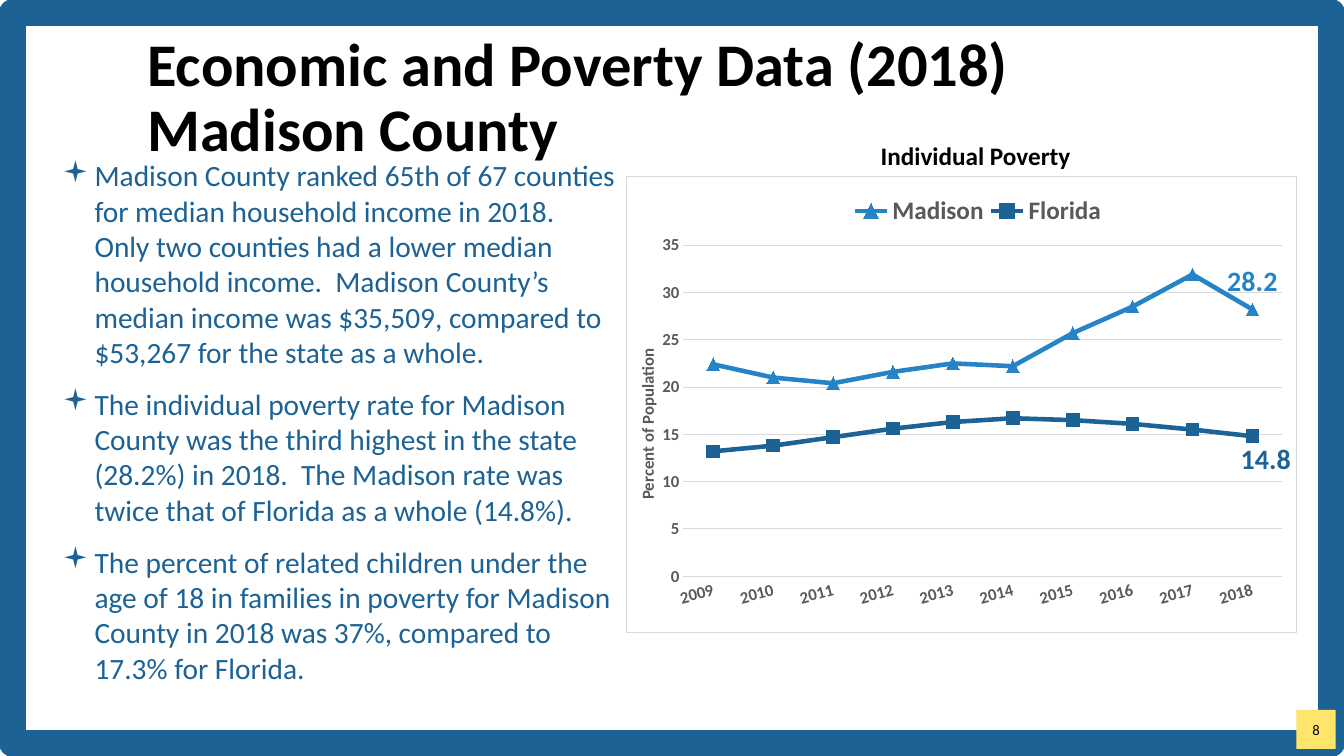
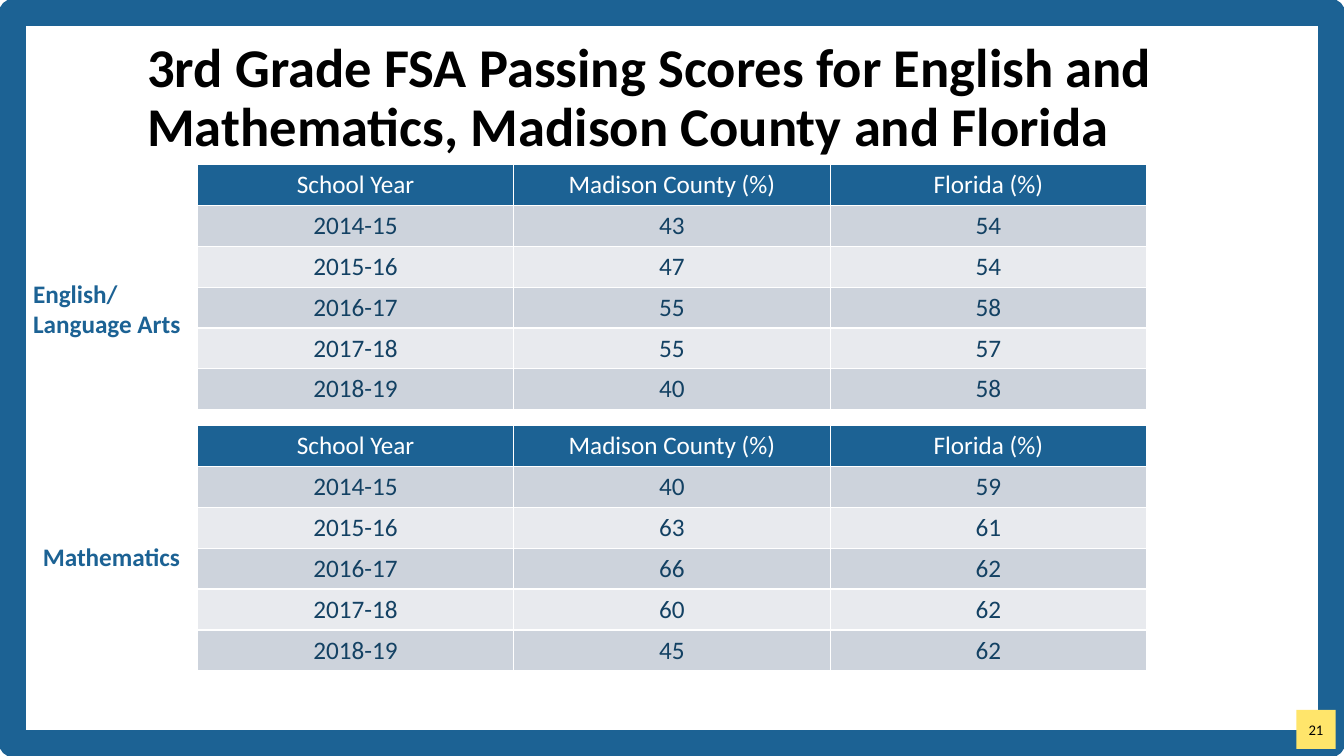
from dataclasses import dataclass

from lxml.etree import SubElement as Sub
from pptx import Presentation
from pptx.chart.data import CategoryChartData as ChartData
from pptx.dml.color import RGBColor as RGB
from pptx.enum.chart import XL_CHART_TYPE as Chart
from pptx.enum.chart import XL_LABEL_POSITION as Spot
from pptx.enum.chart import XL_LEGEND_POSITION as Side
from pptx.enum.chart import XL_MARKER_STYLE as Mark
from pptx.enum.chart import XL_TICK_MARK as Tick
from pptx.enum.shapes import MSO_SHAPE as Shape
from pptx.enum.text import MSO_ANCHOR as Anchor
from pptx.enum.text import MSO_AUTO_SIZE as Fit
from pptx.enum.text import PP_ALIGN as Align
from pptx.oxml import parse_xml
from pptx.oxml.ns import nsdecls, qn
from pptx.util import Pt


@dataclass(frozen=True)
class Theme:
    face: str = "Calibri"
    blue: str = "1C6294"
    sky: str = "2683C6"
    navy: str = "134163"
    black: str = "000000"
    white: str = "FFFFFF"
    gold: str = "FFE56B"
    gray: str = "595959"
    rule: str = "D9D9D9"
    bands: tuple = ("CDD3DC", "E8EAEE")
    body: float = 21
    label: float = 18
    value: float = 20
    axis: float = 12
    page: float = 10.5


def place(node, spot, inner=False):
    """Fill a chart layout element with x, y and optional w, h fractions."""
    box = Sub(node, qn("c:manualLayout"))
    if inner:
        Sub(box, qn("c:layoutTarget")).set("val", "inner")
    if len(spot) == 4 or inner:
        for key in ("xMode", "yMode"):
            Sub(box, qn("c:" + key)).set("val", "edge")
    for key, val in zip("xywh", spot):
        Sub(box, qn("c:" + key)).set("val", str(val))


def layout(after, spot, inner=False):
    """Put a fresh layout element right behind the given one."""
    node = parse_xml(f"<c:layout {nsdecls('c')}/>")
    after.addnext(node)
    place(node, spot, inner)


class Deck:
    def __init__(self, theme):
        self.theme = theme
        self.show = Presentation()
        self.show.slide_width, self.show.slide_height = Pt(960), Pt(540)
        self.slide = None

    def font(self, font, size, color, bold=False):
        font.name, font.size, font.bold = self.theme.face, Pt(size), bold
        font.color.rgb = RGB.from_string(color)

    def style(self, frame, size, color, bold=False, align=Align.LEFT):
        for para in frame.paragraphs:
            para.alignment = align
            for run in para.runs:
                self.font(run.font, size, color, bold)

    def page(self, title, size, num):
        """Start a slide with its frame, title and page number."""
        t = self.theme
        self.slide = self.show.slides.add_slide(self.show.slide_layouts[5])
        frame = self.rect(9, 9, 942, 522)
        frame.fill.background()
        frame.line.color.rgb = RGB.from_string(t.blue)
        frame.line.width = Pt(19)

        badge = self.rect(926, 507, 28, 28)
        badge.fill.solid()
        badge.fill.fore_color.rgb = RGB.from_string(t.gold)
        badge.line.fill.background()
        text = badge.text_frame
        text.margin_left = text.margin_right = 0
        text.vertical_anchor = Anchor.MIDDLE
        text.text = str(num)
        self.style(text, t.page, t.black, align=Align.CENTER)

        head = self.slide.shapes.title
        head.left, head.top, head.width, head.height = Pt(98), Pt(33), Pt(828), Pt(76)
        text = head.text_frame
        text.text = title
        text.auto_size = Fit.NONE
        text.vertical_anchor = Anchor.MIDDLE
        text.paragraphs[0].line_spacing = 0.9
        self.style(text, size, t.black, True)

    def rect(self, *box):
        shape = self.slide.shapes.add_shape(Shape.RECTANGLE, *map(Pt, box))
        shape.shadow.inherit = False
        return shape

    def text(self, words, box, size, color, bold=True):
        frame = self.slide.shapes.add_textbox(*map(Pt, box)).text_frame
        frame.word_wrap = True
        frame.text = words
        self.style(frame, size, color, bold)
        return frame

    def list(self, items, box):
        t = self.theme
        frame = self.text("\n".join(items), box, t.body, t.blue, False)
        for para in frame.paragraphs:
            para.space_after = Pt(12)
            prop = para._p.get_or_add_pPr()
            prop.set("marL", str(Pt(26.5)))
            prop.set("indent", str(Pt(-23)))
            Sub(Sub(prop, qn("a:buClr")), qn("a:srgbClr")).set("val", t.blue)
            Sub(prop, qn("a:buFont")).set("typeface", "Wingdings")
            Sub(prop, qn("a:buChar")).set("char", "▪")

    def table(self, rows, left, top, wide, high):
        t = self.theme
        grid = self.slide.shapes.add_table(
            len(rows), len(rows[0]), Pt(left), Pt(top),
            Pt(wide * len(rows[0])), Pt(high * len(rows))).table
        for r, row in enumerate(rows):
            for c, word in enumerate(row):
                cell = grid.cell(r, c)
                cell.text = str(word)
                self.style(cell.text_frame, t.label, t.navy if r else t.white,
                           align=Align.CENTER)
                cell.fill.solid()
                cell.fill.fore_color.rgb = RGB.from_string(
                    t.bands[(r - 1) % 2] if r else t.blue)
                self.edge(cell)

    def edge(self, cell):
        """Draw thin white borders around a cell."""
        prop = cell._tc.get_or_add_tcPr()
        for pos, side in enumerate("LRTB"):
            prop.insert(pos, parse_xml(
                f'<a:ln{side} {nsdecls("a")} w="{Pt(1)}"><a:solidFill>'
                f'<a:srgbClr val="{self.theme.white}"/></a:solidFill></a:ln{side}>'))

    def chart(self, years, lines, unit, box):
        """Add a line chart; lines hold name, values, colour, marker, label spot, shift."""
        t = self.theme
        data = ChartData()
        data.categories = years
        for name, vals, *_ in lines:
            data.add_series(name, vals)
        chart = self.slide.shapes.add_chart(
            Chart.LINE_MARKERS, *map(Pt, box), data).chart
        chart.has_title = False
        self.font(chart.font, 10, t.black)
        chart._chartSpace.find(qn("c:txPr")).addprevious(parse_xml(
            f'<c:spPr {nsdecls("c", "a")}><a:noFill/><a:ln w="{Pt(0.75)}"><a:solidFill>'
            f'<a:srgbClr val="{t.rule}"/></a:solidFill></a:ln></c:spPr>'))
        area = chart._chartSpace.chart.plotArea
        for old in area.findall(qn("c:layout")):
            area.remove(old)
        node = parse_xml(f"<c:layout {nsdecls('c')}/>")
        area.insert(0, node)
        place(node, (0.085, 0.15, 0.894, 0.727), True)

        chart.has_legend = True
        key = chart.legend
        key.position, key.include_in_layout = Side.BOTTOM, False
        self.font(key.font, t.label, t.gray, True)
        for old in key._element.findall(qn("c:layout")):
            key._element.remove(old)
        layout(key._element.find(qn("c:legendPos")), (0.33, 0.03, 0.39, 0.09))
        self.axes(chart, unit)

        chart.plots[0].vary_by_categories = False
        for line, (_, vals, color, mark, spot, shift) in zip(chart.plots[0].series, lines):
            paint = RGB.from_string(color)
            line.smooth = False
            line.format.line.color.rgb = paint
            line.format.line.width = Pt(3.25)
            line.marker.style, line.marker.size = mark, 9
            line.marker.format.fill.solid()
            line.marker.format.fill.fore_color.rgb = paint
            line.marker.format.line.color.rgb = paint
            label = line.points[len(vals) - 1].data_label
            self.font(label.font, t.value, color, True)
            label.position = spot
            if shift:
                layout(line._element.find(".//" + qn("c:dLbl")).find(qn("c:idx")), shift)

    def axes(self, chart, unit):
        t = self.theme
        cat, val = chart.category_axis, chart.value_axis
        for axis in (cat, val):
            axis.major_tick_mark = axis.minor_tick_mark = Tick.NONE
            self.font(axis.tick_labels.font, t.axis, t.gray, True)
        cat._element.find(qn("c:txPr")).find(qn("a:bodyPr")).set("rot", "-900000")
        val.minimum_scale, val.maximum_scale, val.major_unit = 0, 35, 5
        val.format.line.fill.background()
        for line in (cat.format.line, val.major_gridlines.format.line):
            line.color.rgb = RGB.from_string(t.rule)
            line.width = Pt(0.75)
        frame = val.axis_title.text_frame
        frame.text = unit
        self.style(frame, t.axis, t.gray, True, Align.CENTER)
        frame._txBody.find(qn("a:bodyPr")).set("rot", "-5400000")
        node = val.axis_title._element
        for old in node.findall(qn("c:layout")):
            node.remove(old)
        layout(node.find(qn("c:tx")), (0.01, 0.37), True)
        target = node.find(".//" + qn("c:layoutTarget"))
        target.getparent().remove(target)


def main():
    t = Theme()
    deck = Deck(t)

    deck.page("Economic and Poverty Data (2018)\vMadison County", 43.2, 8)
    deck.list([
        "Madison County ranked 65th of 67 counties for median household income in 2018.  "
        "Only two counties had a lower median household income.  Madison County’s median "
        "income was $35,509, compared to $53,267 for the state as a whole.",
        "The individual poverty rate for Madison County was the third highest in the state "
        "(28.2%) in 2018.  The Madison rate was twice that of Florida as a whole (14.8%).",
        "The percent of related children under the age of 18 in families in poverty for "
        "Madison County in 2018 was 37%, compared to 17.3% for Florida.",
    ], (34, 109, 413, 406))
    deck.chart([str(year) for year in range(2009, 2019)], [
        ("Madison", (22.4, 21, 20.4, 21.6, 22.5, 22.2, 25.7, 28.5, 31.9, 28.2),
         t.sky, Mark.TRIANGLE, Spot.ABOVE, None),
        ("Florida", (13.2, 13.8, 14.7, 15.6, 16.3, 16.7, 16.5, 16.1, 15.5, 14.8),
         t.blue, Mark.SQUARE, Spot.BELOW, (0.02, -0.01)),
    ], "Percent of Population", (447, 126, 479.5, 326))
    deck.text("Individual Poverty", (622, 96.5, 160.5, 29), t.label, t.black)

    deck.page("3rd Grade FSA Passing Scores for English and Mathematics, "
              "Madison County and Florida", 39, 21)
    head = ("School Year", "Madison County (%)", "Florida (%)")
    years = [f"20{year}-{year + 1}" for year in range(14, 19)]
    for top, local, state in (
            (117.5, (43, 47, 55, 55, 40), (54, 54, 58, 57, 58)),
            (304, (40, 63, 66, 60, 45), (59, 61, 62, 62, 62))):
        deck.table([head, *zip(years, local, state)], 141, top, 226, 29)
    deck.text("English/\nLanguage Arts", (16.5, 195, 132, 51), t.label, t.blue)
    deck.text("Mathematics", (23.5, 383, 117.5, 29), t.label, t.blue)

    deck.show.save("out.pptx")


if __name__ == "__main__":
    main()
